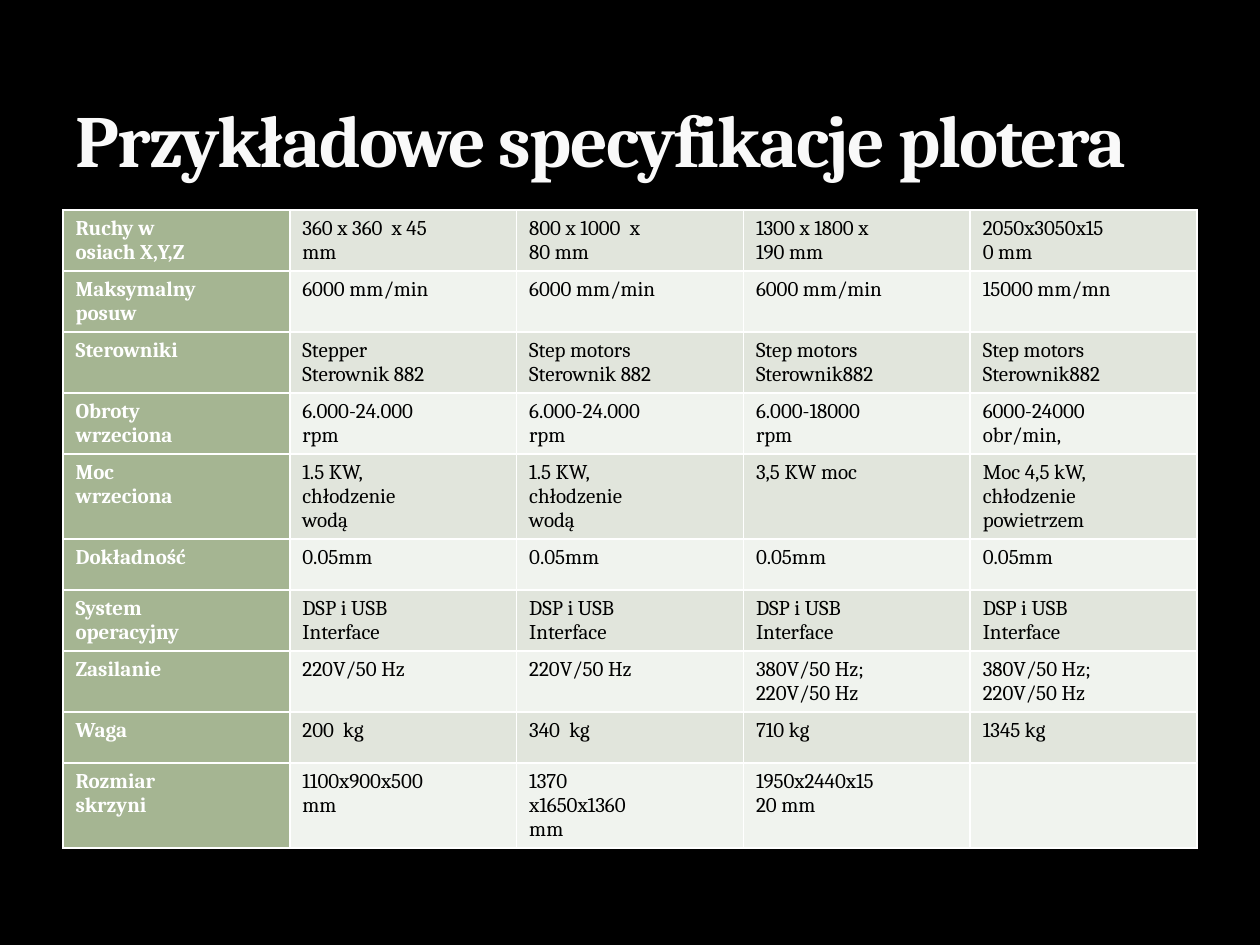
from pptx import Presentation
from pptx.dml.color import RGBColor
from pptx.enum.text import MSO_ANCHOR, PP_ALIGN
from pptx.oxml.ns import qn
from pptx.util import Pt
from lxml import etree

BOTTOM = MSO_ANCHOR.BOTTOM
LEFT = PP_ALIGN.LEFT
FONT = "Cambria"
BLACK = RGBColor(0x00, 0x00, 0x00)
WHITE = RGBColor(0xFF, 0xFF, 0xFF)
TITLE_WHITE = RGBColor(0xF9, 0xF9, 0xF9)
LABEL_GREEN = RGBColor(0xA5, 0xB5, 0x92)
BAND_COLORS = (RGBColor(0xE1, 0xE5, 0xDC), RGBColor(0xF0, 0xF3, 0xEE))

TITLE_BOX = (36, 12.24, 648, 95.76)
TABLE_BOX = (36, 120, 648, 292)
SPECIFICATIONS = (
    ("Ruchy w\nosiach X,Y,Z", "360 x 360  x 45\nmm", "800 x 1000  x\n80 mm",
     "1300 x 1800 x\n190 mm", "2050x3050x15\n0 mm"),
    ("Maksymalny\nposuw", "6000 mm/min", "6000 mm/min", "6000 mm/min", "15000 mm/mn"),
    ("Sterowniki", "Stepper\nSterownik 882", "Step motors\nSterownik 882",
     "Step motors\nSterownik882", "Step motors\nSterownik882"),
    ("Obroty\nwrzeciona", "6.000-24.000\nrpm", "6.000-24.000\nrpm",
     "6.000-18000\nrpm", "6000-24000\nobr/min,"),
    ("Moc\nwrzeciona", "1.5 KW,\nchłodzenie\nwodą", "1.5 KW,\nchłodzenie\nwodą",
     "3,5 KW moc", "Moc 4,5 kW,\nchłodzenie\npowietrzem"),
    ("Dokładność", "0.05mm", "0.05mm", "0.05mm", "0.05mm"),
    ("System\noperacyjny", "DSP i USB\nInterface", "DSP i USB\nInterface",
     "DSP i USB\nInterface", "DSP i USB\nInterface"),
    ("Zasilanie", "220V/50 Hz", "220V/50 Hz", "380V/50 Hz;\n220V/50 Hz",
     "380V/50 Hz;\n220V/50 Hz"),
    ("Waga", "200  kg", "340  kg", "710 kg", "1345 kg"),
    ("Rozmiar\nskrzyni", "1100x900x500\nmm", "1370\nx1650x1360\nmm",
     "1950x2440x15\n20 mm", ""),
)


def write_text(frame, text, size=12, color=BLACK, bold=False, spacing=None):
    """Write each line of text as a formatted paragraph."""
    for index, line in enumerate(text.split("\n")):
        para = frame.paragraphs[0] if index == 0 else frame.add_paragraph()
        para.alignment = LEFT
        para.font.size = Pt(size)
        if not line:
            continue
        span = para.add_run()
        span.text = line
        span.font.name = FONT
        span.font.size = Pt(size)
        span.font.bold = bold
        span.font.color.rgb = color
        if spacing is not None:
            span.font._element.set("spc", str(round(spacing * 100)))


def add_borders(cell, color, width):
    """Draw a solid line on all four sides of a table cell."""
    properties = cell._tc.get_or_add_tcPr()
    for position, side in enumerate(("lnL", "lnR", "lnT", "lnB")):
        line = etree.Element(qn(f"a:{side}"), w=str(Pt(width)))
        fill = etree.SubElement(line, qn("a:solidFill"))
        etree.SubElement(fill, qn("a:srgbClr"), val=str(color))
        properties.insert(position, line)


def place_title(page, box, text):
    """Move the title placeholder into the box and fill it."""
    title = page.shapes.title
    title.left, title.top, title.width, title.height = map(Pt, box)
    title.text_frame.word_wrap = True
    title.text_frame.vertical_anchor = BOTTOM
    write_text(title.text_frame, text, size=42, color=TITLE_WHITE, bold=True, spacing=-1)


def place_table(page, box, rows):
    """Build the banded specification table with a label column."""
    columns = len(rows[0])
    table = page.shapes.add_table(len(rows), columns, *map(Pt, box)).table
    table.first_row = False
    table.first_col = True
    for column in table.columns:
        column.width = Pt(box[2] / columns)
    for row_index, texts in enumerate(rows):
        table.rows[row_index].height = Pt(box[3] / len(rows))
        for column_index, text in enumerate(texts):
            is_label = column_index == 0
            cell = table.cell(row_index, column_index)
            cell.fill.solid()
            cell.fill.fore_color.rgb = LABEL_GREEN if is_label else BAND_COLORS[row_index % 2]
            add_borders(cell, WHITE, 1)
            write_text(cell.text_frame, text, color=WHITE if is_label else BLACK, bold=is_label)


def main():
    """Build and save the slide."""
    deck = Presentation()
    deck.slide_width, deck.slide_height = Pt(720), Pt(540)
    page = deck.slides.add_slide(deck.slide_layouts[5])
    page.background.fill.solid()
    page.background.fill.fore_color.rgb = BLACK
    place_table(page, TABLE_BOX, SPECIFICATIONS)
    place_title(page, TITLE_BOX, "Przykładowe specyfikacje plotera")
    deck.save("out.pptx")


if __name__ == "__main__":
    main()
